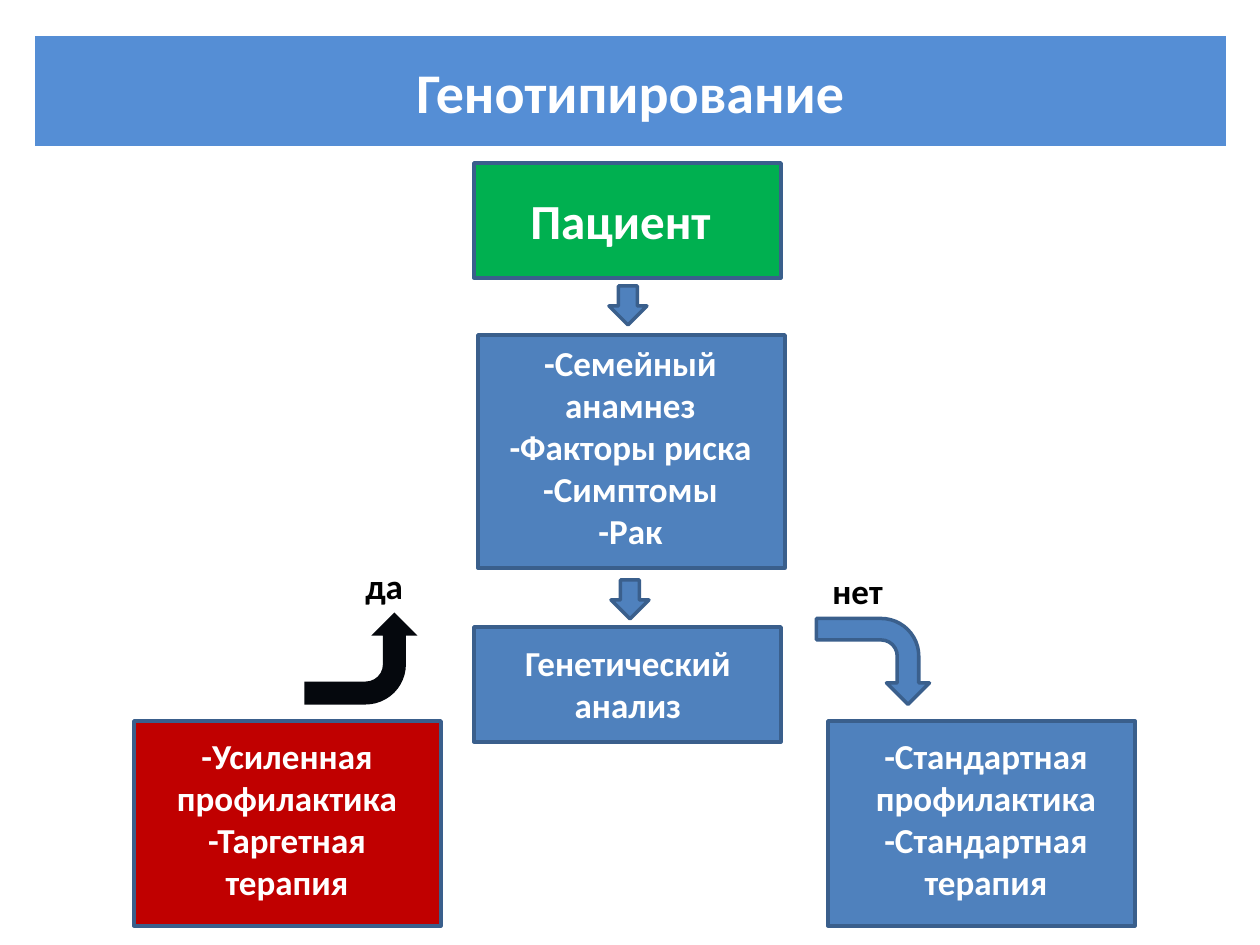
from pptx import Presentation
from pptx.dml.color import RGBColor
from pptx.enum.shapes import MSO_SHAPE
from pptx.enum.text import MSO_ANCHOR, PP_ALIGN
from pptx.util import Emu, Pt

RECT, DOWN, BENT = MSO_SHAPE.RECTANGLE, MSO_SHAPE.DOWN_ARROW, MSO_SHAPE.BENT_ARROW
LEFT, CENTER = PP_ALIGN.LEFT, PP_ALIGN.CENTER
TOP, MIDDLE = MSO_ANCHOR.TOP, MSO_ANCHOR.MIDDLE

WHITE = RGBColor(0xFF, 0xFF, 0xFF)
BLACK = RGBColor(0x00, 0x00, 0x00)
INK = RGBColor(0x05, 0x08, 0x0D)
SKY = RGBColor(0x55, 0x8E, 0xD5)
BLUE = RGBColor(0x4F, 0x81, 0xBD)
OUTLINE = RGBColor(0x3A, 0x5F, 0x8C)
GREEN = RGBColor(0x00, 0xB0, 0x50)
RED = RGBColor(0xC0, 0x00, 0x00)

PX = 914400 // 126
NODE_W = 307


def px(*lengths):
    return [Emu(n * PX) for n in lengths]


def add_figure(s, kind, box, fill, line=OUTLINE):
    sp = s.shapes.add_shape(kind, *px(*box))
    sp.shadow.inherit = False
    sp.fill.solid()
    sp.fill.fore_color.rgb = fill
    if line is None:
        sp.line.fill.background()
    else:
        sp.line.color.rgb = line
        sp.line.width = Pt(2)
    return sp


def write(sp, lines, size, color=WHITE, align=CENTER, anchor=TOP):
    tf = sp.text_frame
    tf.word_wrap = True
    tf.vertical_anchor = anchor
    tf.text = "\n".join(lines)
    for p in tf.paragraphs:
        p.alignment = align
        p.font.name = "Calibri"
        p.font.size = Pt(size)
        p.font.bold = True
        p.font.color.rgb = color


def add_title(s, box, text):
    write(add_figure(s, RECT, box, SKY, None), [text], 32, anchor=MIDDLE)


def add_node(s, box, fill, inset, lines, size=20, align=CENTER):
    """Box with its caption; inset is dx, dy, width, height inside the box."""
    x, y = box[:2]
    dx, dy, w, h = inset
    add_figure(s, RECT, box, fill)
    write(s.shapes.add_textbox(*px(x + dx, y + dy, w, h)), lines, size, align=align)


def add_branch(s, box, label, label_offset, fill, line, upward):
    """Bent arrow turned to point down, or mirrored to point up, with its label."""
    x, y = box[:2]
    dx, dy = label_offset
    sp = add_figure(s, BENT, box, fill, line)
    sp.rotation = 90
    if upward:
        sp._element.spPr.xfrm.set("flipH", "1")
    write(s.shapes.add_textbox(*px(x + dx, y + dy, 129, 55)), [label], 20, BLACK, LEFT)


def main():
    prs = Presentation()
    prs.slide_width, prs.slide_height = px(1260, 945)
    s = prs.slides.add_slide(prs.slide_layouts[6])

    add_title(s, (35, 36, 1191, 110), "Генотипирование")

    # Central column
    add_node(s, (474, 163, NODE_W, 115), GREEN, (44, 21, 258, 72),
             ["Пациент"], 28, LEFT)
    add_node(s, (478, 335, NODE_W, 233), BLUE, (0, 0, 305, 224),
             ["-Семейный анамнез", "-Факторы риска", "-Симптомы", "-Рак"])
    add_node(s, (474, 627, NODE_W, 115), BLUE, (25, 8, 258, 97),
             ["Генетический анализ"])
    for x, y in ((609, 286), (611, 580)):
        add_figure(s, DOWN, (x, y, 38, 39), BLUE)

    # Outcomes
    for x, fill, dx, kind, therapy in (
            (134, RED, 24, "Усиленная", "Таргетная"),
            (828, BLUE, 29, "Стандартная", "Стандартная")):
        add_node(s, (x, 721, NODE_W, 205), fill, (dx, 7, 258, 183),
                 [f"-{kind} профилактика", f"-{therapy} терапия"])

    # Yes and no branches
    add_branch(s, (315, 602, 92, 113), "да", (38, -44), INK, None, True)
    add_branch(s, (830, 605, 86, 113), "нет", (-10, -42), BLUE, OUTLINE, False)

    prs.save("out.pptx")


if __name__ == "__main__":
    main()
